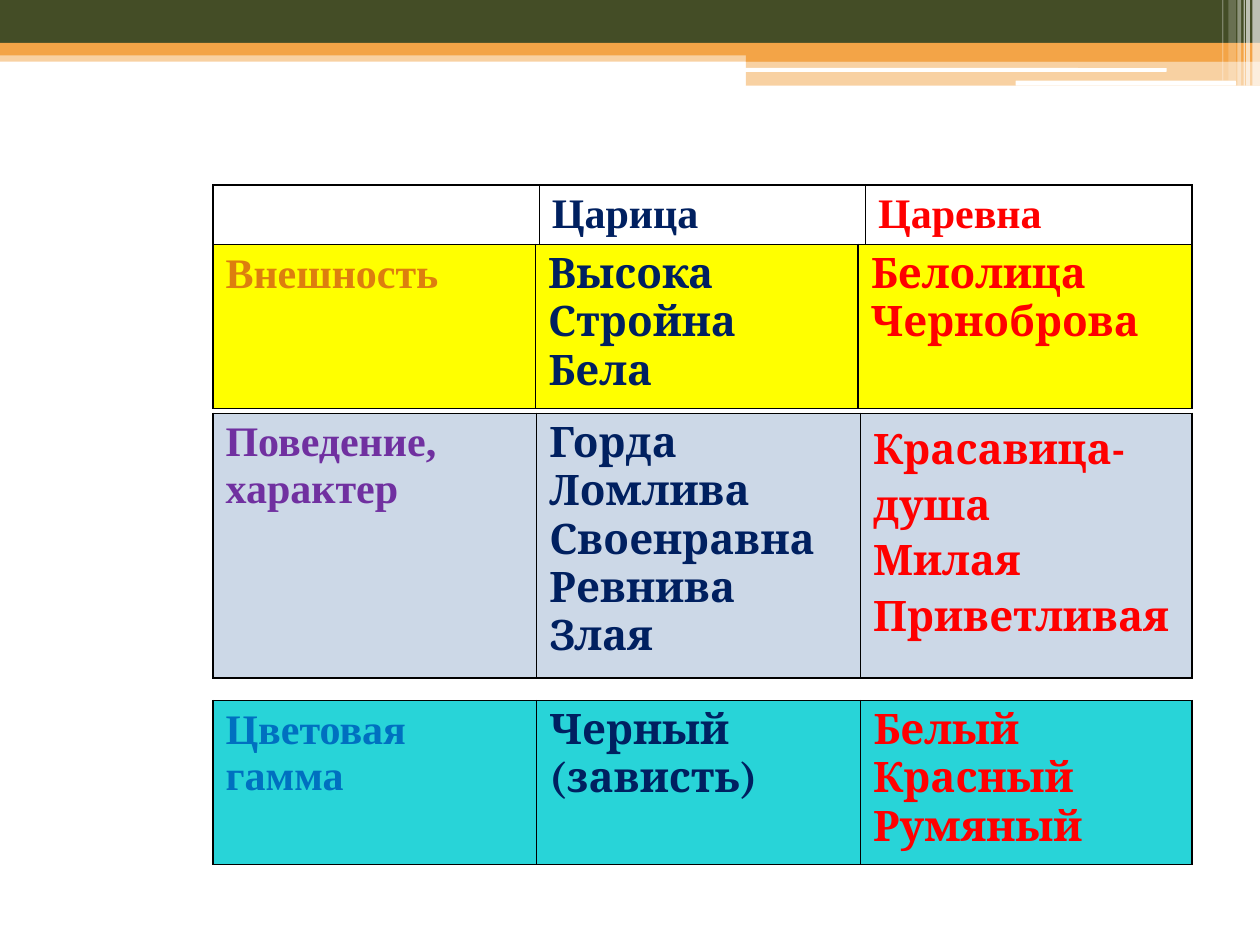
from lxml import etree
from pptx import Presentation
from pptx.dml.color import RGBColor
from pptx.enum.shapes import MSO_SHAPE
from pptx.oxml.ns import qn
from pptx.util import Inches, Pt

RECT = MSO_SHAPE.RECTANGLE
ROUND = MSO_SHAPE.ROUNDED_RECTANGLE
GREEN, ORANGE, WHITE = "444D26", "F3A447", "FFFFFF"
NAVY, RED, BLACK = "002060", "FF0000", "000000"
SERIF, BODY = "Times New Roman", "Cambria"


def rgb(value):
    return RGBColor.from_string(value)


def add_border(cell):
    tc_pr = cell._tc.get_or_add_tcPr()
    for side in ("a:lnL", "a:lnR", "a:lnT", "a:lnB"):
        ln = etree.SubElement(tc_pr, qn(side), w=str(Pt(1)))
        fill = etree.SubElement(ln, qn("a:solidFill"))
        etree.SubElement(fill, qn("a:srgbClr"), val=BLACK)


prs = Presentation()
prs.slide_width, prs.slide_height = Inches(10), Inches(7.5)
s = prs.slides.add_slide(prs.slide_layouts[6])

# Header bands and stripes: shape, left, top, width, height, colour, opacity %
bands = [
    (RECT, 0, 0.4, 10, 0.09, ORANGE, 50),
    (RECT, 0, 0, 10, 0.34, GREEN, 100),
    (RECT, 0, 0.34, 10, 0.1, ORANGE, 100),
    (RECT, 5.92, 0.39, 4.08, 0.1, ORANGE, 100),
    (RECT, 5.92, 0.48, 4.08, 0.2, ORANGE, 50),
    (ROUND, 5.91, 0.54, 3.35, 0.03, WHITE, 100),
    (ROUND, 8.06, 0.64, 1.75, 0.04, WHITE, 100),
    (RECT, 9.94, 0, 0.06, 0.68, WHITE, 65),
    (RECT, 9.89, 0, 0.03, 0.68, WHITE, 65),
    (RECT, 9.87, 0, 0.01, 0.68, WHITE, 60),
    (RECT, 9.82, 0, 0.03, 0.68, WHITE, 40),
    (RECT, 9.75, 0, 0.06, 0.64, WHITE, 20),
    (RECT, 9.7, 0, 0.01, 0.64, WHITE, 30),
]
for kind, left, top, width, height, color, opacity in bands:
    sp = s.shapes.add_shape(kind, Inches(left), Inches(top), Inches(width), Inches(height))
    sp.shadow.inherit = False
    sp.line.fill.background()
    sp.fill.solid()
    sp.fill.fore_color.rgb = rgb(color)
    if opacity < 100:
        clr = sp.fill._xPr.find(qn("a:solidFill"))[0]
        etree.SubElement(clr, qn("a:alpha"), val=str(opacity * 1000))

# One-row tables: top, height, column widths, fill, cells (text, font, colour, spacing)
tables = [
    (1.47, 0.48, (2.59, 2.59, 2.59), WHITE, [
        ("", SERIF, NAVY, None),
        ("Царица", SERIF, NAVY, None),
        ("Царевна", SERIF, RED, None)]),
    (1.94, 1.3, (2.56, 2.56, 2.65), "FFFF00", [
        ("Внешность", SERIF, "DD7E0E", None),
        ("Высока\nСтройна\nБела", BODY, NAVY, None),
        ("Белолица\nЧерноброва", BODY, RED, None)]),
    (3.28, 2.1, (2.57, 2.57, 2.63), "CCD8E7", [
        ("Поведение, характер", SERIF, "7030A0", None),
        ("Горда\nЛомлива\nСвоенравна\nРевнива\nЗлая", BODY, NAVY, None),
        ("Красавица-душа\nМилая\nПриветливая", BODY, RED, 1.15)]),
    (5.56, 1.3, (2.57, 2.57, 2.63), "28D4D8", [
        ("Цветовая гамма", SERIF, "0070C0", None),
        ("Черный (зависть)", BODY, NAVY, None),
        ("Белый\nКрасный\nРумяный", BODY, RED, None)]),
]
for top, height, widths, fill, cells in tables:
    table = s.shapes.add_table(1, 3, Inches(1.69), Inches(top),
                               Inches(sum(widths)), Inches(height)).table
    table.first_row = table.horz_banding = False
    for i, (text, font, color, spacing) in enumerate(cells):
        table.columns[i].width = Inches(widths[i])
        cell = table.cell(0, i)
        add_border(cell)
        cell.fill.solid()
        cell.fill.fore_color.rgb = rgb(fill)
        if not text:
            continue
        p = cell.text_frame.paragraphs[0]
        if spacing:
            p.line_spacing = spacing
        for n, line in enumerate(text.split("\n")):
            if n:
                p.add_line_break()
            r = p.add_run()
            r.text = line
            r.font.name = font
            r.font.size = Pt(24)
            r.font.bold = True
            r.font.color.rgb = rgb(color)

prs.save("out.pptx")
